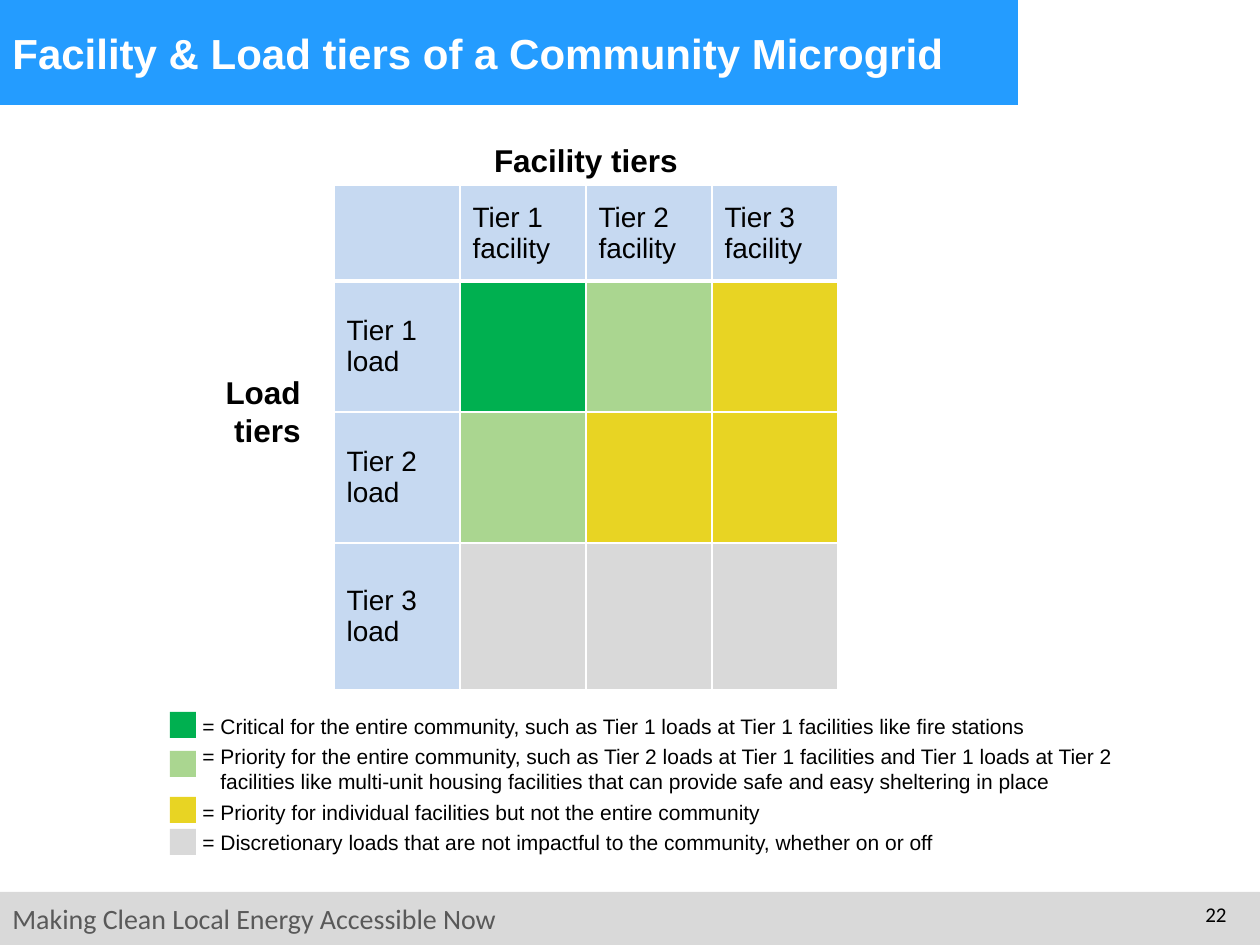
from lxml import etree
from pptx import Presentation
from pptx.dml.color import RGBColor
from pptx.enum.shapes import MSO_SHAPE
from pptx.enum.text import MSO_ANCHOR, PP_ALIGN
from pptx.oxml.ns import qn
from pptx.util import Pt

PX = 914400 / 126
HEX = {
    "white": "FFFFFF", "black": "000000", "blue": "249CFF",
    "head": "C6D9F1", "crit": "00B050", "prio": "AAD690",
    "own": "E8D423", "disc": "D9D9D9", "grey": "595959",
}

TITLE = "Facility & Load tiers of a Community Microgrid"
HEADS = ["", "Tier 1 facility", "Tier 2 facility", "Tier 3 facility"]
LOADS = [
    ("Tier 1 load", ["crit", "prio", "own"]),
    ("Tier 2 load", ["prio", "own", "own"]),
    ("Tier 3 load", ["disc", "disc", "disc"]),
]
LEGEND = [  # colour, top of swatch, text
    ("crit", 712, "= Critical for the entire community, such as Tier 1 loads at "
     "Tier 1 facilities like fire stations"),
    ("prio", 751, "= Priority for the entire community, such as Tier 2 loads at "
     "Tier 1 facilities and Tier 1 loads at Tier 2\vfacilities like multi-unit "
     "housing facilities that can provide safe and easy sheltering in place"),
    ("own", 797, "= Priority for individual facilities but not the entire community"),
    ("disc", 829, "= Discretionary loads that are not impactful to the community, "
     "whether on or off"),
]
BARS = [("disc", (0, 892, 1260, 53)), ("blue", (0, 0, 1018, 105))]

HEAD = {"size": 18, "bold": True, "align": PP_ALIGN.CENTER}
LABELS = [  # text, box, format
    ("Making Clean Local Energy Accessible Now", (0, 895, 651, 47),
     {"size": 16, "name": "Calibri", "color": "grey"}),
    ("22", (1176, 895, 63, 50),
     {"size": 12, "name": "Calibri", "align": PP_ALIGN.RIGHT}),
    (TITLE, (0, 0, 1028, 105),
     {"size": 24, "bold": True, "color": "white", "anchor": MSO_ANCHOR.MIDDLE}),
    ("Facility tiers", (334, 135, 504, 50), HEAD),
    ("Load \vtiers", (200, 367, 135, 89), HEAD),
]
KEY = (190, 707, 978, 156)
SWATCH = (170, 26)  # left, side
HANG = 18
GRID = (334, 185)
COL = 126
ROWS = [96, 131, 131, 147]


def emu(px):
    return round(px * PX)


def rgb(key):
    return RGBColor.from_string(HEX[key])


def style(para, size, name="Arial", color="black", bold=False, align=PP_ALIGN.LEFT):
    para.alignment = align
    for key, val in {"size": Pt(size), "name": name, "bold": bold}.items():
        setattr(para.font, key, val)
    para.font.color.rgb = rgb(color)


def add_box(slide, box, anchor=MSO_ANCHOR.TOP):
    frame = slide.shapes.add_textbox(*map(emu, box)).text_frame
    frame.word_wrap = True
    frame.vertical_anchor = anchor
    return frame


def add_label(slide, text, box, form):
    form = dict(form)
    frame = add_box(slide, box, form.pop("anchor", MSO_ANCHOR.TOP))
    frame.text = text
    style(frame.paragraphs[0], **form)


def add_rect(slide, color, box):
    rect = slide.shapes.add_shape(MSO_SHAPE.RECTANGLE, *map(emu, box))
    rect.shadow.inherit = False
    rect.fill.solid()
    rect.fill.fore_color.rgb = rgb(color)
    rect.line.fill.background()


def add_edges(cell, top, bottom):
    """Draw white cell borders; widths in points."""
    props = cell._tc.get_or_add_tcPr()
    edges = {"L": 1, "R": 1, "T": top, "B": bottom}
    for pos, (side, width) in enumerate(edges.items()):
        line = etree.Element(qn(f"a:ln{side}"), w=str(Pt(width)))
        fill = etree.SubElement(line, qn("a:solidFill"))
        etree.SubElement(fill, qn("a:srgbClr"), val=HEX["white"])
        props.insert(pos, line)


def add_grid(slide):
    rows = [[(text, "head") for text in HEADS]]
    rows += [[(name, "head")] + [("", key) for key in keys] for name, keys in LOADS]
    size = (COL * len(HEADS), sum(ROWS))
    table = slide.shapes.add_table(
        len(rows), len(HEADS), *map(emu, GRID + size)).table
    table.first_row = table.horz_banding = False
    for col in table.columns:
        col.width = emu(COL)
    for r, row in enumerate(rows):
        table.rows[r].height = emu(ROWS[r])
        for c, (text, color) in enumerate(row):
            cell = table.cell(r, c)
            cell.text = text
            cell.vertical_anchor = MSO_ANCHOR.MIDDLE
            style(cell.text_frame.paragraphs[0], 16)
            cell.fill.solid()
            cell.fill.fore_color.rgb = rgb(color)
            add_edges(cell, 3 if r == 1 else 1, 3 if r == 0 else 1)


def add_legend(slide):
    frame = add_box(slide, KEY)
    left, side = SWATCH
    for i, (color, top, text) in enumerate(LEGEND):
        para = frame.add_paragraph() if i else frame.paragraphs[0]
        para.text = text
        para.space_after = Pt(3)
        props = para._p.get_or_add_pPr()
        props.set("marL", str(emu(HANG)))
        props.set("indent", str(-emu(HANG)))
        style(para, 12)
        add_rect(slide, color, (left, top, side, side))


def main():
    deck = Presentation()
    deck.slide_width, deck.slide_height = emu(1260), emu(945)
    slide = deck.slides.add_slide(deck.slide_layouts[6])
    for color, box in BARS:
        add_rect(slide, color, box)
    for label in LABELS:
        add_label(slide, *label)
    add_grid(slide)
    add_legend(slide)
    deck.save("out.pptx")


if __name__ == "__main__":
    main()
